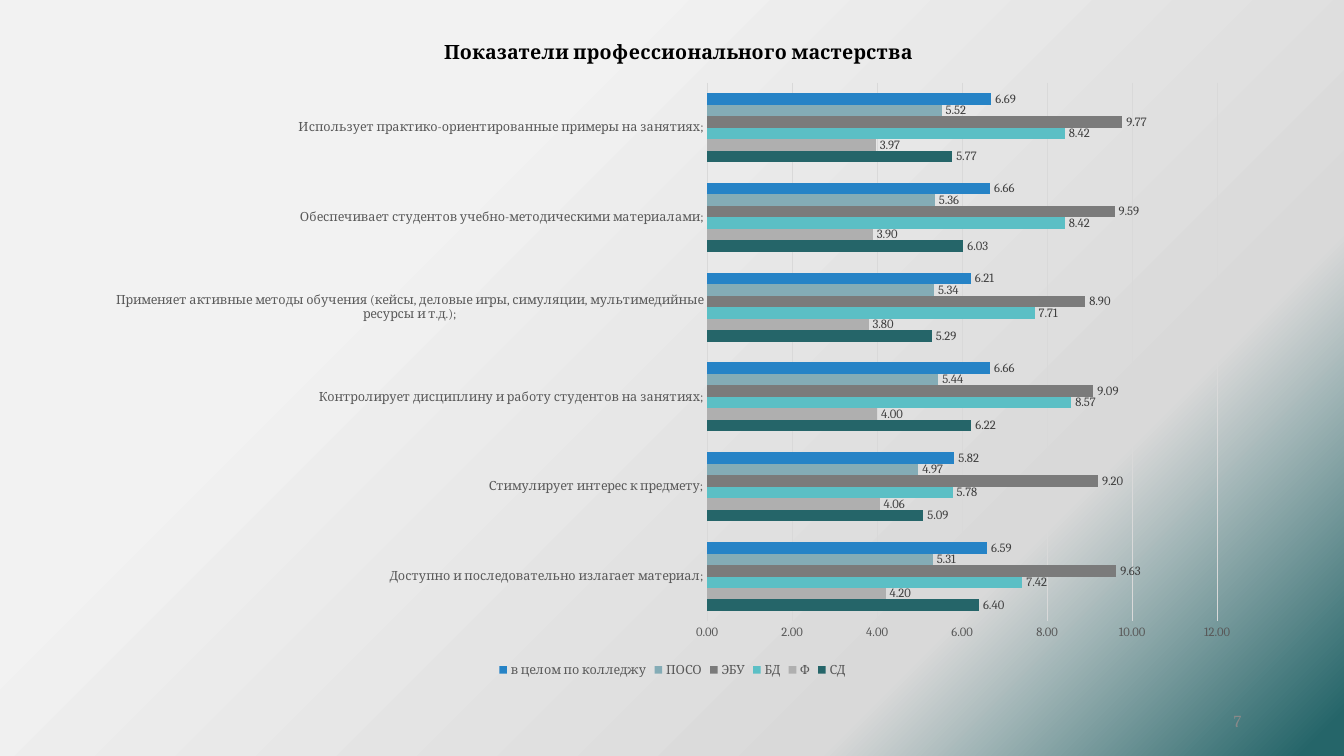
"""Builds the slide with the chart of professional skill ratings."""
from lxml import etree
from pptx import Presentation
from pptx.chart.data import CategoryChartData
from pptx.dml.color import RGBColor
from pptx.enum.chart import XL_CHART_TYPE, XL_LABEL_POSITION, XL_LEGEND_POSITION, XL_TICK_MARK
from pptx.enum.text import MSO_ANCHOR, PP_ALIGN
from pptx.oxml import parse_xml
from pptx.oxml.ns import nsdecls, qn
from pptx.util import Cm, Pt

BAR = XL_CHART_TYPE.BAR_CLUSTERED
BOTTOM = XL_LEGEND_POSITION.BOTTOM
OUTSIDE = XL_LABEL_POSITION.OUTSIDE_END
NO_TICK = XL_TICK_MARK.NONE
RIGHT = PP_ALIGN.RIGHT
MIDDLE = MSO_ANCHOR.MIDDLE

TITLE = "Показатели профессионального мастерства"
PAGE = "7"
CATEGORIES = [
    "Доступно и последовательно излагает материал;",
    "Стимулирует интерес к предмету;",
    "Контролирует дисциплину и работу студентов на занятиях;",
    "Применяет активные методы обучения (кейсы, деловые игры, симуляции, "
    "мультимедийные ресурсы и т.д.);",
    "Обеспечивает студентов учебно-методическими материалами;",
    "Использует практико-ориентированные примеры на занятиях;",
]
SERIES = [
    ("СД", "256569", (6.40, 5.09, 6.22, 5.29, 6.03, 5.77)),
    ("Ф", "AFAFAF", (4.20, 4.06, 4.00, 3.80, 3.90, 3.97)),
    ("БД", "5BBFC5", (7.42, 5.78, 8.57, 7.71, 8.42, 8.42)),
    ("ЭБУ", "7B7B7B", (9.63, 9.20, 9.09, 8.90, 9.59, 9.77)),
    ("ПОСО", "84ACB6", (5.31, 4.97, 5.44, 5.34, 5.36, 5.52)),
    ("в целом по колледжу", "2683C6", (6.59, 5.82, 6.66, 6.21, 6.66, 6.69)),
]
THEME = {
    "font": "Cambria",
    "title": (14, "000000"),
    "axis": (9, "595959"),
    "label": (9, "404040"),
    "page": (12, "898989"),
    "grid": "D9D9D9",
    "background": [(1, "F2F2F2"), (29, "F2F2F2"), (75, "D9D9D9"), (98, "256569")],
}
TITLE_LAYOUT = {"x": 0.3, "y": 0.03}
PLOT_LAYOUT = {"x": 0.53, "y": 0.1, "w": 0.44, "h": 0.81}


def style_font(font, role, bold=False):
    size, color = THEME[role]
    font.name, font.size, font.bold = THEME["font"], Pt(size), bold
    font.color.rgb = RGBColor.from_string(color)


def style_line(line):
    line.color.rgb = RGBColor.from_string(THEME["grid"])
    line.width = Pt(0.75)


def set_layout(parent, index, values, inner=False):
    for old in parent.findall(qn("c:layout")):
        parent.remove(old)
    layout = parse_xml(f"<c:layout {nsdecls('c')}><c:manualLayout/></c:layout>")
    settings = [("layoutTarget", "inner")] if inner else []
    settings += [("xMode", "edge"), ("yMode", "edge"), *values.items()]
    for tag, value in settings:
        etree.SubElement(layout[0], qn(f"c:{tag}")).set("val", str(value))
    parent.insert(index, layout)


def paint_background(s):
    s.background.fill.solid()
    stops = "".join(
        f'<a:gs pos="{pos * 1000}"><a:srgbClr val="{color}"/></a:gs>'
        for pos, color in THEME["background"]
    )
    gradient = parse_xml(
        f'<a:gradFill {nsdecls("a")} rotWithShape="1"><a:gsLst>{stops}</a:gsLst>'
        '<a:path path="circle"><a:fillToRect r="100000" b="100000"/></a:path></a:gradFill>'
    )
    bg = s.element.find(".//" + qn("p:bgPr"))
    bg.replace(bg.find(qn("a:solidFill")), gradient)


def add_ratings(s):
    data = CategoryChartData(number_format="0.00")
    data.categories = CATEGORIES
    for name, _, values in SERIES:
        data.add_series(name, values)
    chart = s.shapes.add_chart(BAR, Cm(2.34), Cm(0.41), Cm(29.21), Cm(16.76), data).chart
    style_font(chart.font, "axis")

    chart.has_title = True
    tf = chart.chart_title.text_frame
    tf.text = TITLE
    style_font(tf.paragraphs[0].runs[0].font, "title", bold=True)
    chart.chart_title.include_in_layout = False
    set_layout(chart.element.find(".//" + qn("c:title")), 1, TITLE_LAYOUT)
    set_layout(chart.element.find(".//" + qn("c:plotArea")), 0, PLOT_LAYOUT, inner=True)

    chart.has_legend = True
    chart.legend.position = BOTTOM
    chart.legend.include_in_layout = False
    style_font(chart.legend.font, "axis")

    for axis in (chart.category_axis, chart.value_axis):
        axis.major_tick_mark = axis.minor_tick_mark = NO_TICK
        style_font(axis.tick_labels.font, "axis")
    style_line(chart.category_axis.format.line)
    values_axis = chart.value_axis
    values_axis.minimum_scale, values_axis.maximum_scale, values_axis.major_unit = 0, 12, 2
    values_axis.format.line.fill.background()
    style_line(values_axis.major_gridlines.format.line)
    values_axis.tick_labels.number_format = "0.00"
    values_axis.tick_labels.number_format_is_linked = False

    plot = chart.plots[0]
    plot.gap_width, plot.overlap, plot.vary_by_categories = 182, 0, False
    plot.has_data_labels = True
    labels = plot.data_labels
    labels.show_value, labels.position = True, OUTSIDE
    labels.number_format, labels.number_format_is_linked = "0.00", False
    style_font(labels.font, "label")
    for series, (_, color, _) in zip(plot.series, SERIES):
        series.format.fill.solid()
        series.format.fill.fore_color.rgb = RGBColor.from_string(color)


def add_page_number(s):
    tf = s.shapes.add_textbox(Cm(23.92), Cm(17.66), Cm(7.62), Cm(1.01)).text_frame
    tf.word_wrap = True
    tf.vertical_anchor = MIDDLE
    tf.text = PAGE
    p = tf.paragraphs[0]
    p.alignment = RIGHT
    style_font(p.runs[0].font, "page")


def main():
    prs = Presentation()
    prs.slide_width, prs.slide_height = Cm(33.87), Cm(19.05)
    s = prs.slides.add_slide(prs.slide_layouts[6])
    paint_background(s)
    add_ratings(s)
    add_page_number(s)
    prs.save("out.pptx")


if __name__ == "__main__":
    main()
